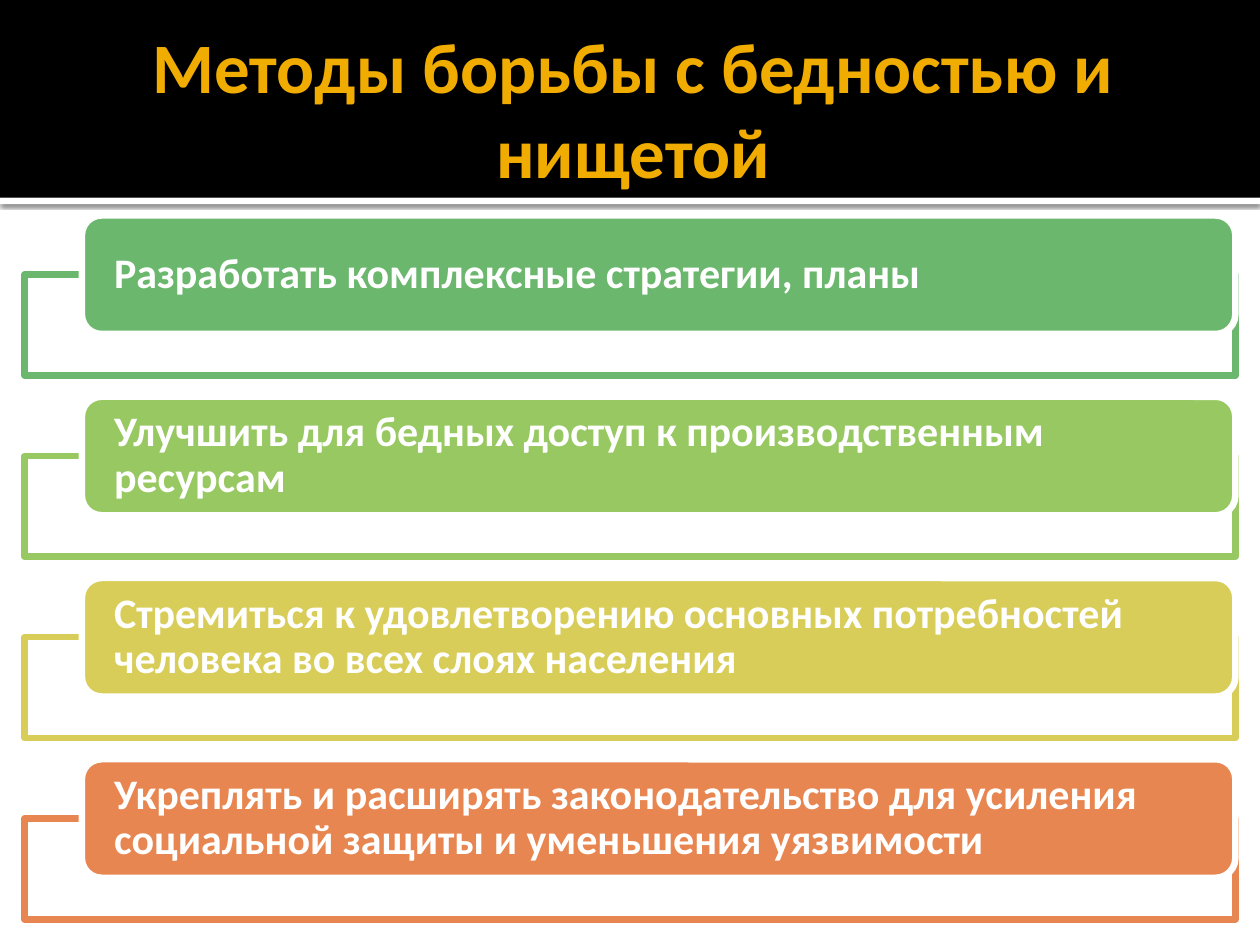
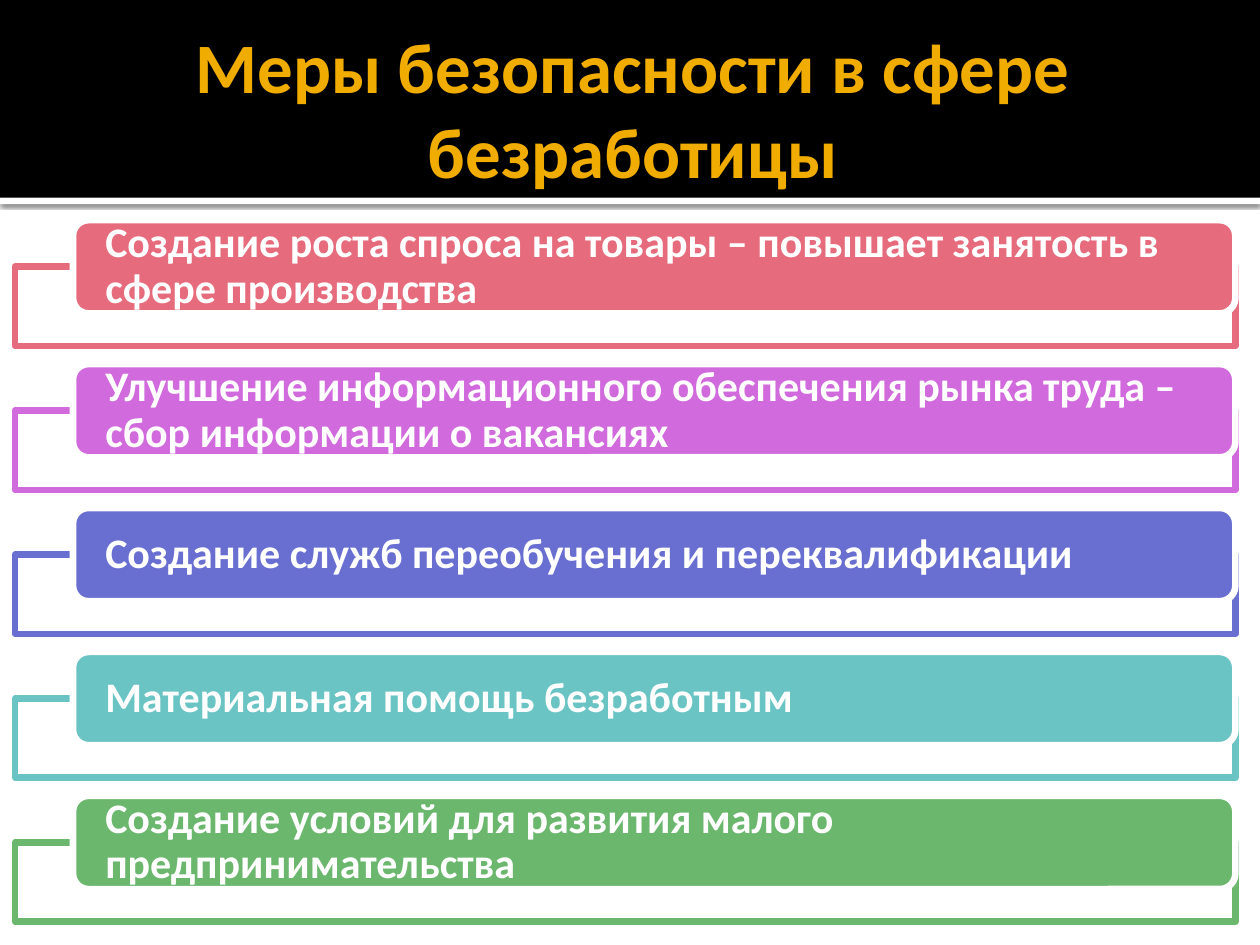
"""Builds two slides of stacked colour bars under a shared title band."""
from dataclasses import dataclass

from lxml import etree
from pptx import Presentation
from pptx import util as u
from pptx.dml.color import RGBColor
from pptx.enum import shapes, text
from pptx.oxml import parse_xml
from pptx.oxml.ns import nsdecls, qn

WIDTH, HEIGHT = u.Inches(10), u.Inches(7.5)
COLUMN, ROW = WIDTH / 100, HEIGHT / 100
FONT = "Calibri"
BLACK = RGBColor(0x00, 0x00, 0x00)
WHITE = RGBColor(0xFF, 0xFF, 0xFF)
GOLD = RGBColor(0xF0, 0xAD, 0x00)
GREEN = RGBColor(0x6B, 0xB7, 0x6D)
LIME = RGBColor(0x98, 0xC8, 0x61)
YELLOW = RGBColor(0xD9, 0xCD, 0x59)
ORANGE = RGBColor(0xE8, 0x86, 0x51)
ROSE = RGBColor(0xE6, 0x6C, 0x7D)
VIOLET = RGBColor(0xD1, 0x6A, 0xDC)
INDIGO = RGBColor(0x69, 0x6F, 0xD1)
TEAL = RGBColor(0x6A, 0xC4, 0xC3)

BAND_ROWS = 20.93
STRIP_ROWS = 0.67
RIGHT_EDGE = 98.05
FRAME_SHARE = 0.85
LINE_WIDTH = u.Pt(3.78)


@dataclass(frozen=True)
class Area:
    """A rectangle in grid columns and rows."""
    left: float
    top: float
    width: float
    height: float

    def bounds(self) -> list[u.Emu]:
        """Return left, top, width and height as lengths."""
        units = (COLUMN, ROW, COLUMN, ROW)
        sides = (self.left, self.top, self.width, self.height)
        return [u.Emu(round(side * unit)) for side, unit in zip(sides, units)]


@dataclass(frozen=True)
class Bar:
    """One measure and its colour."""
    words: str
    colour: RGBColor


@dataclass(frozen=True)
class BarList:
    """A slide's title, its bars, and the grid they stand on."""
    title: str
    bars: tuple[Bar, ...]
    frame_left: float
    bar_left: float
    top: float
    bar_rows: float
    pitch: float
    inset: float


POVERTY = BarList(
    "Методы борьбы с бедностью и нищетой",
    (
        Bar("Разработать комплексные стратегии, планы", GREEN),
        Bar("Улучшить для бедных доступ к производственным ресурсам", LIME),
        Bar("Стремиться к удовлетворению основных потребностей человека "
            "во всех слоях населения", YELLOW),
        Bar("Укреплять и расширять законодательство для усиления "
            "социальной защиты и уменьшения уязвимости", ORANGE),
    ),
    frame_left=1.95, bar_left=6.5, top=22.8, bar_rows=12.55, pitch=19.18, inset=2.1,
)
UNEMPLOYMENT = BarList(
    "Меры безопасности в сфере безработицы",
    (
        Bar("Создание роста спроса на товары – повышает занятость "
            "в сфере производства", ROSE),
        Bar("Улучшение информационного обеспечения рынка труда – "
            "сбор информации о вакансиях", VIOLET),
        Bar("Создание служб переобучения и переквалификации", INDIGO),
        Bar("Материальная помощь безработным", TEAL),
        Bar("Создание условий для развития малого предпринимательства", GREEN),
    ),
    frame_left=1.2, bar_left=5.8, top=23.3, bar_rows=9.87, pitch=15.23, inset=2.2,
)


def add_block(slide, kind, area: Area, fill: RGBColor, line: RGBColor | None = None):
    """Draw a filled shape without a shadow."""
    box = slide.shapes.add_shape(kind, *area.bounds())
    box.shadow.inherit = False
    box.fill.solid()
    box.fill.fore_color.rgb = fill
    if line is None:
        box.line.fill.background()
    else:
        box.line.color.rgb = line
        box.line.width = LINE_WIDTH
    return box


def write(frame, words: str, size: float, colour: RGBColor, align) -> None:
    """Fill a text frame with one bold run, centred vertically."""
    frame.word_wrap = True
    frame.auto_size = text.MSO_AUTO_SIZE.NONE
    frame.vertical_anchor = text.MSO_ANCHOR.MIDDLE
    para = frame.paragraphs[0]
    para.alignment = align
    span = para.add_run()
    span.text = words
    span.font.name = FONT
    span.font.size = u.Pt(size)
    span.font.bold = True
    span.font.color.rgb = colour


def drop_shadow(box) -> None:
    """Give a shape a soft shadow below it."""
    effects = box.element.spPr.find(qn("a:effectLst"))
    effects.append(parse_xml(
        f'<a:outerShdw {nsdecls("a")} blurRad="{u.Pt(2.5)}" dist="{u.Pt(0.8)}" '
        'dir="5400000" rotWithShape="0"><a:srgbClr val="000000">'
        '<a:alpha val="60000"/></a:srgbClr></a:outerShdw>'))


def add_shared_band(slide, layout) -> None:
    """Draw the title band and its strip, and move both to the layout."""
    rectangle = shapes.MSO_SHAPE.RECTANGLE
    strip = add_block(slide, rectangle, Area(0, BAND_ROWS, 100, STRIP_ROWS), WHITE)
    drop_shadow(strip)
    band = add_block(slide, rectangle, Area(0, 0, 100, BAND_ROWS), BLACK)
    for index, part in enumerate((strip, band)):
        part.element.nvSpPr.cNvPr.set("id", str(100 + index))
        layout.shapes.element.insert(2 + index, part.element)


def add_title(slide, words: str) -> None:
    """Place and format the title placeholder."""
    title = slide.shapes.title
    title.left, title.top, title.width, title.height = Area(5, 2.27, 90, 18.27).bounds()
    frame = title.text_frame
    frame.margin_left = u.Inches(0.1)
    frame.margin_right = frame.margin_top = frame.margin_bottom = u.Inches(0.05)
    write(frame, words, 40.5, GOLD, text.PP_ALIGN.CENTER)


def add_bar(slide, page: BarList, bar: Bar, top: float) -> None:
    """Draw an outlined frame whose top runs behind the middle of a bar."""
    frame_area = Area(page.frame_left, top + page.bar_rows / 2,
                      RIGHT_EDGE - page.frame_left, page.bar_rows * FRAME_SHARE)
    frame = add_block(slide, shapes.MSO_SHAPE.RECTANGLE, frame_area, WHITE, bar.colour)
    white = frame.element.spPr.find(qn("a:solidFill"))[0]
    etree.SubElement(white, qn("a:alpha"), val="90000")

    bar_area = Area(page.bar_left, top, RIGHT_EDGE - page.bar_left, page.bar_rows)
    box = add_block(slide, shapes.MSO_SHAPE.ROUNDED_RECTANGLE, bar_area, bar.colour, WHITE)
    label = box.text_frame
    label.margin_left = label.margin_right = u.Emu(round(page.inset * COLUMN))
    label.margin_top = label.margin_bottom = 0
    write(label, bar.words, 24, WHITE, text.PP_ALIGN.LEFT)
    label.paragraphs[0].line_spacing = 0.9


def main() -> None:
    """Build and save the deck."""
    deck = Presentation()
    deck.slide_width, deck.slide_height = WIDTH, HEIGHT
    layout = deck.slide_layouts.get_by_name("Title Only")
    for number, page in enumerate((POVERTY, UNEMPLOYMENT)):
        slide = deck.slides.add_slide(layout)
        if number == 0:
            add_shared_band(slide, layout)
        add_title(slide, page.title)
        for index, bar in enumerate(page.bars):
            add_bar(slide, page, bar, page.top + index * page.pitch)
    deck.save("out.pptx")


if __name__ == "__main__":
    main()
